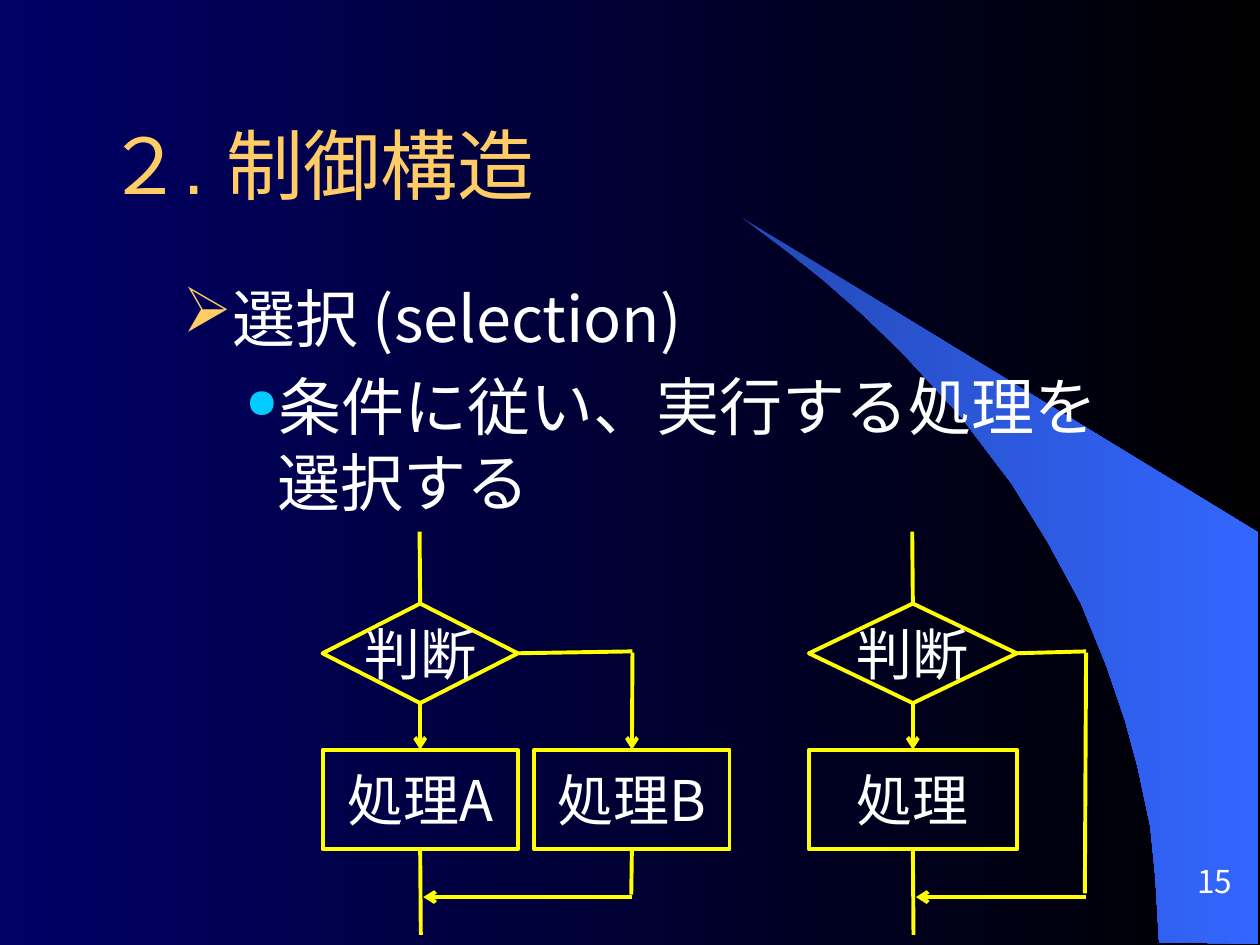
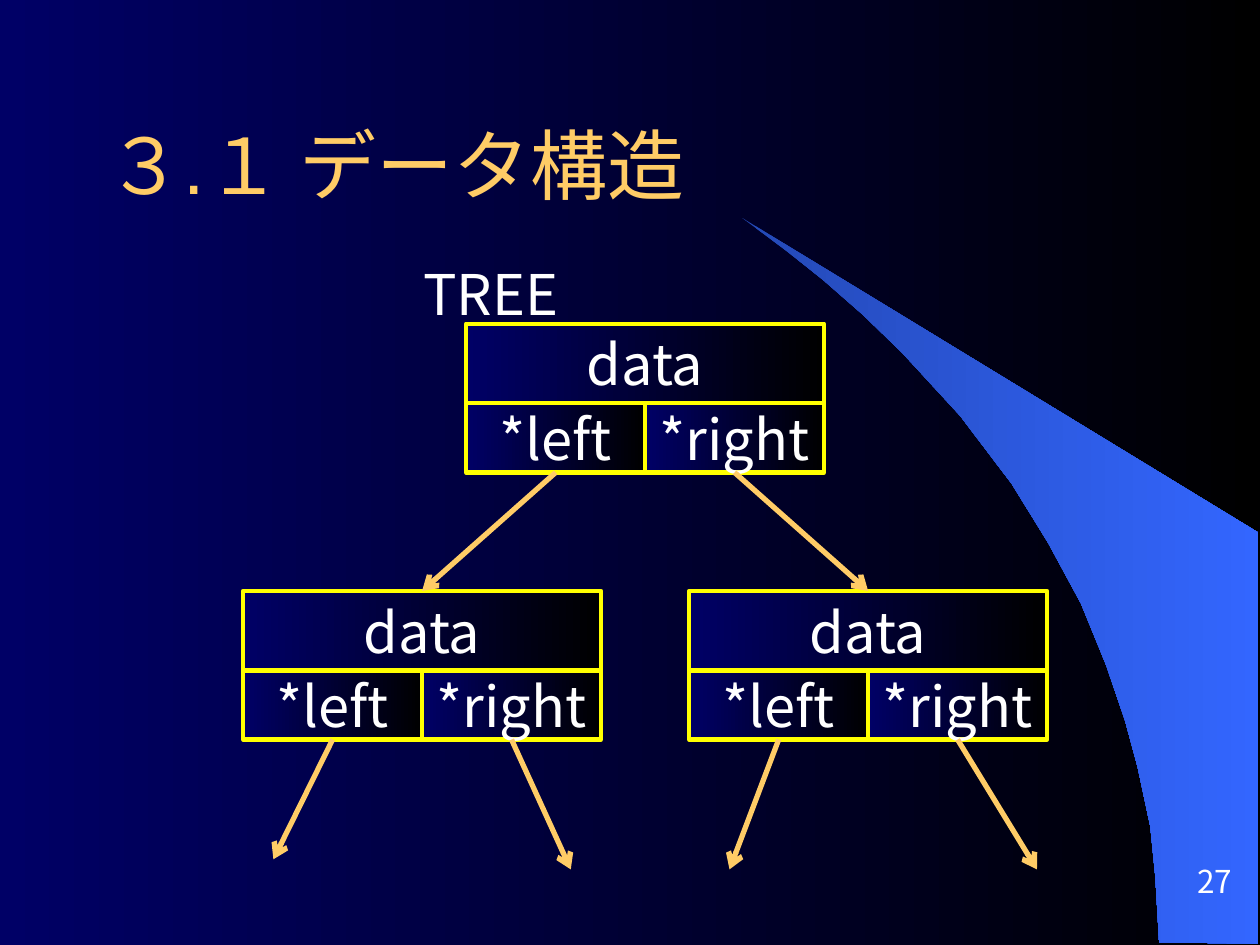
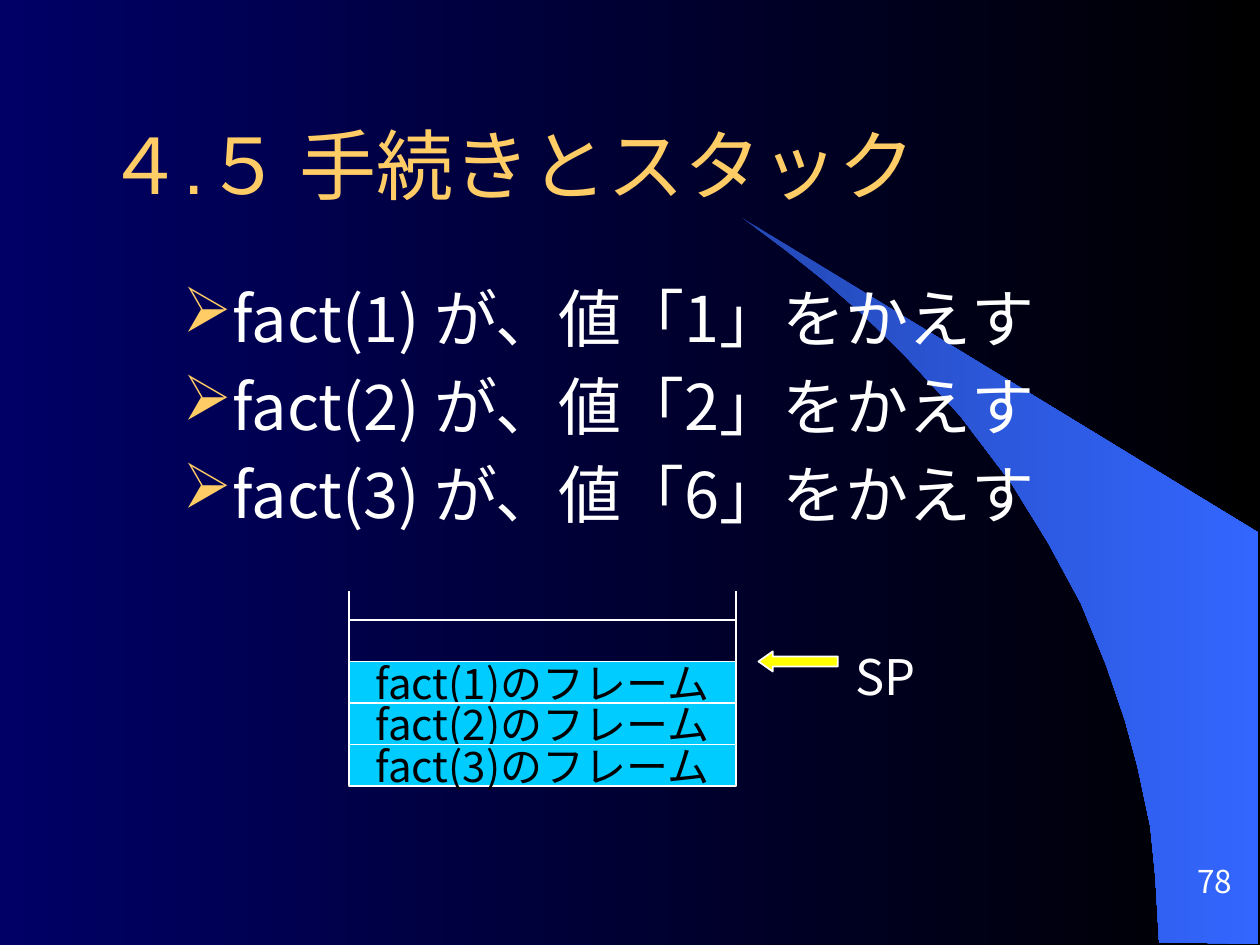
import dataclasses
import typing

import pptx
import pptx.dml.color
import pptx.dml.fill
import pptx.enum.lang
import pptx.enum.shapes
import pptx.enum.text
import pptx.oxml
import pptx.oxml.ns
import pptx.shapes.autoshape
import pptx.shapes.connector
import pptx.slide
import pptx.util

SCALE = 9144
WIDE, HIGH = 1000, 750

Slide = pptx.slide.Slide
Shape = pptx.shapes.autoshape.Shape
Kind = pptx.enum.shapes.MSO_SHAPE
Align = pptx.enum.text.PP_ALIGN
Anchor = pptx.enum.text.MSO_ANCHOR
Fill = typing.Union[None, str, tuple[str, str]]


@dataclasses.dataclass(frozen=True)
class Theme:
    navy: str = "000066"
    black: str = "000000"
    white: str = "FFFFFF"
    gold: str = "FFCC66"
    yellow: str = "FFFF00"
    cyan: str = "00CCFF"
    deep: str = "2449B6"
    blue: str = "3366FF"
    head: str = "Arial"
    sans: str = "Noto Sans CJK JP"
    title: int = 44
    body: int = 36
    label: int = 32
    note: int = 28
    frame: int = 24
    page: int = 18


THEME = Theme()
NIGHT = (THEME.navy, THEME.black)


class Box(typing.NamedTuple):
    left: int
    top: int
    width: int
    height: int


class Point(typing.NamedTuple):
    x: int
    y: int


class Dock(typing.NamedTuple):
    shape: Shape
    site: int


End = typing.Union[Point, Dock]


class Pen(typing.NamedTuple):
    color: str
    width: float


class Type(typing.NamedTuple):
    size: int
    color: str = THEME.white
    font: str = THEME.sans


class Level(typing.NamedTuple):
    margin: int
    hang: int
    mark: str
    color: str
    size: int


class Item(typing.NamedTuple):
    level: int
    text: str


FLOW = Pen(THEME.yellow, 2.25)
EDGE = Pen(THEME.yellow, 2.5)
LINK = Pen(THEME.gold, 3)
THIN = Pen(THEME.white, 1)
LABEL = Type(THEME.label)
LEVELS = {
    1: Level(81, -31, "➢", THEME.gold, 100),
    2: Level(125, -25, "●", THEME.cyan, 65),
}
BAND = [
    Point(920, 748), Point(999, 749), Point(999, 423), Point(589, 173),
    Point(624, 199), Point(653, 222), Point(685, 250), Point(716, 280),
    Point(762, 330), Point(803, 384), Point(832, 431), Point(858, 479),
    Point(878, 528), Point(893, 572), Point(903, 609), Point(913, 656),
    Point(917, 696),
]


def emu(*sizes: int) -> list[int]:
    return [size * SCALE for size in sizes]


def rgb(code: str) -> pptx.dml.color.RGBColor:
    return pptx.dml.color.RGBColor.from_string(code)


def paint(fill: pptx.dml.fill.FillFormat, color: Fill) -> None:
    if color is None:
        fill.background()
    elif isinstance(color, str):
        fill.solid()
        fill.fore_color.rgb = rgb(color)
    else:
        fill.gradient()
        fill.gradient_angle = 0
        for stop, code in zip(fill.gradient_stops, color):
            stop.color.rgb = rgb(code)


def write(para, text: str, style: Type) -> None:
    run = para.add_run()
    run.text = text
    font = run.font
    font.name = style.font
    font.size = pptx.util.Pt(style.size)
    font.color.rgb = rgb(style.color)
    font.language_id = pptx.enum.lang.MSO_LANGUAGE_ID.JAPANESE
    east = pptx.oxml.parse_xml(
        f'<a:ea {pptx.oxml.ns.nsdecls("a")} typeface="{THEME.sans}"/>'
    )
    run.font._element.find(pptx.oxml.ns.qn("a:latin")).addnext(east)


def add_part(props, tag: str, **attrs: str):
    part = props.makeelement(pptx.oxml.ns.qn(tag), attrs)
    props.append(part)
    return part


def space(para, percent: int) -> None:
    gap = add_part(para._p.get_or_add_pPr(), "a:spcBef")
    add_part(gap, "a:spcPct", val=str(percent * 1000))


def mark(para, level: Level) -> None:
    props = para._p.get_or_add_pPr()
    margin, hang = emu(level.margin, level.hang)
    props.set("marL", str(margin))
    props.set("indent", str(hang))
    tint = add_part(props, "a:buClr")
    add_part(tint, "a:srgbClr", val=level.color)
    add_part(props, "a:buSzPct", val=str(level.size * 1000))
    add_part(props, "a:buChar", char=level.mark)


def add_text(slide: Slide, box: Box, anchor: Anchor = Anchor.TOP,
             wrap: bool = True, side: int = 10, edge: int = 5):
    frame = slide.shapes.add_textbox(*emu(*box)).text_frame
    frame.word_wrap = wrap
    frame.vertical_anchor = anchor
    frame.margin_left = frame.margin_right = side * SCALE
    frame.margin_top = frame.margin_bottom = edge * SCALE
    return frame


def add_shape(slide: Slide, kind: Kind, box: Box, fill: Fill, pen: Pen,
              text: str = "", style: Type = LABEL, wrap: bool = False) -> Shape:
    shape = slide.shapes.add_shape(kind, *emu(*box))
    shape.shadow.inherit = False
    paint(shape.fill, fill)
    shape.line.color.rgb = rgb(pen.color)
    shape.line.width = pptx.util.Pt(pen.width)
    if text:
        frame = shape.text_frame
        frame.word_wrap = wrap
        frame.vertical_anchor = Anchor.MIDDLE
        para = frame.paragraphs[0]
        para.alignment = Align.CENTER
        write(para, text, style)
    return shape


def locate(end: End) -> list[int]:
    if isinstance(end, Point):
        return emu(*end)
    shape = end.shape
    across = (1, 0, 1, 2)[end.site]
    down = (0, 1, 2, 1)[end.site]
    return [shape.left + shape.width * across // 2,
            shape.top + shape.height * down // 2]


def add_wire(slide: Slide, start: End, stop: End, pen: Pen,
             arrow: bool = False) -> None:
    wire = slide.shapes.add_connector(
        pptx.enum.shapes.MSO_CONNECTOR.STRAIGHT, *locate(start), *locate(stop)
    )
    if isinstance(start, Dock):
        wire.begin_connect(start.shape, start.site)
    if isinstance(stop, Dock):
        wire.end_connect(stop.shape, stop.site)
    wire.line.color.rgb = rgb(pen.color)
    wire.line.width = pptx.util.Pt(pen.width)
    if arrow:
        add_part(wire.line._get_or_add_ln(), "a:tailEnd", type="arrow")
    add_part(wire._element.spPr, "a:effectLst")


def add_slide(deck, title: str, page: int) -> Slide:
    slide = deck.slides.add_slide(deck.slide_layouts[6])
    paint(slide.background.fill, NIGHT)
    build = slide.shapes.build_freeform(*BAND[0], scale=SCALE)
    build.add_line_segments(BAND[1:], close=True)
    band = build.convert_to_shape()
    band.shadow.inherit = False
    paint(band.fill, (THEME.deep, THEME.blue))
    band.line.fill.background()
    head = add_text(slide, Box(75, 67, 884, 125), Anchor.MIDDLE)
    write(head.paragraphs[0], title, Type(THEME.title, THEME.gold, THEME.head))
    foot = add_text(slide, Box(886, 672, 102, 42), Anchor.BOTTOM, False, edge=0)
    foot.paragraphs[0].alignment = Align.RIGHT
    write(foot.paragraphs[0], str(page), Type(THEME.page))
    return slide


def add_list(slide: Slide, height: int, items: list[Item]) -> None:
    frame = add_text(slide, Box(75, 217, 850, height), side=20)
    for index, item in enumerate(items):
        para = frame.add_paragraph() if index else frame.paragraphs[0]
        para.level = item.level
        space(para, 20)
        mark(para, LEVELS[item.level])
        write(para, item.text, Type(THEME.body))


def add_step(slide: Slide, left: int, width: int, text: str) -> Shape:
    box = Box(left, 595, width, 79)
    return add_shape(slide, Kind.RECTANGLE, box, None, FLOW, text)


def add_flow(slide: Slide, left: int, width: int, text: str, turn: int) -> None:
    mid = left + width // 2
    box = Box(left, 479, width, 79)
    test = add_shape(slide, Kind.FLOWCHART_DECISION, box, None, FLOW, "判断")
    step = add_step(slide, left, width, text)
    add_wire(slide, Point(mid, 422), Dock(test, 0), FLOW)
    add_wire(slide, Dock(test, 2), Dock(step, 0), FLOW, True)
    add_wire(slide, Dock(step, 2), Point(mid + 1, 742), FLOW)
    add_wire(slide, Dock(test, 3), Point(turn, 517), FLOW)
    add_wire(slide, Point(turn, 712), Point(mid + 3, 712), FLOW, True)


def draw_choice(deck) -> None:
    slide = add_slide(deck, "２. 制御構造", 15)
    add_list(slide, 206, [
        Item(1, "選択 (selection)"),
        Item(2, "条件に従い、実行する処理を選択する"),
    ])
    add_flow(slide, 256, 155, "処理A", 502)
    other = add_step(slide, 424, 155, "処理B")
    add_wire(slide, Point(502, 518), Dock(other, 0), FLOW, True)
    add_wire(slide, Dock(other, 2), Point(501, 710), FLOW)
    add_flow(slide, 642, 165, "処理", 862)
    add_wire(slide, Point(861, 709), Point(862, 518), FLOW)


def add_node(slide: Slide, left: int, top: int) -> list[Shape]:
    half = 142
    cells = [
        (Box(left, top, 2 * half, 63), "data"),
        (Box(left, top + 63, half, 55), "*left"),
        (Box(left + half, top + 63, half, 55), "*right"),
    ]
    return [
        add_shape(slide, Kind.RECTANGLE, box, NIGHT, EDGE, text, wrap=True)
        for box, text in cells
    ]


def draw_tree(deck) -> None:
    slide = add_slide(deck, "３.１ データ構造", 27)
    root = add_node(slide, 370, 257)
    leaves = [
        (193, Point(217, 682), Point(453, 690)),
        (547, Point(579, 690), Point(823, 690)),
    ]
    for side, (left, *ends) in zip(root[1:], leaves):
        node = add_node(slide, left, 469)
        add_wire(slide, Dock(side, 2), Dock(node[0], 0), LINK, True)
        for cell, end in zip(node[1:], ends):
            add_wire(slide, Dock(cell, 2), end, LINK, True)
    para = add_text(slide, Box(303, 201, 173, 64)).paragraphs[0]
    para.alignment = Align.CENTER
    write(para, "TREE", LABEL)


def draw_stack(deck) -> None:
    slide = add_slide(deck, "４.５ 手続きとスタック", 78)
    add_list(slide, 450, [
        Item(1, f"fact({call}) が、値「{value}」をかえす")
        for call, value in ((1, 1), (2, 2), (3, 6))
    ])
    left, top, width, height = 277, 492, 307, 33
    style = Type(THEME.frame, THEME.black)
    for row in range(4):
        box = Box(left, top + row * height, width, height)
        fill = THEME.cyan if row else None
        text = f"fact({row})のフレーム" if row else ""
        add_shape(slide, Kind.RECTANGLE, box, fill, THIN, text, style)
    for x in (left, left + width):
        add_wire(slide, Point(x, 494), Point(x, 469), THIN)
    arrow = add_shape(
        slide, Kind.LEFT_ARROW, Box(602, 517, 63, 16), THEME.yellow, THIN
    )
    arrow.adjustments[0] = 0.5
    arrow.adjustments[1] = 0.71
    para = add_text(slide, Box(669, 485, 226, 94)).paragraphs[0]
    para.line_spacing = 1.5
    space(para, 50)
    write(para, "SP", Type(THEME.note))


def main() -> None:
    deck = pptx.Presentation()
    deck.slide_width, deck.slide_height = emu(WIDE, HIGH)
    draw_choice(deck)
    draw_tree(deck)
    draw_stack(deck)
    deck.save("out.pptx")


if __name__ == "__main__":
    main()
